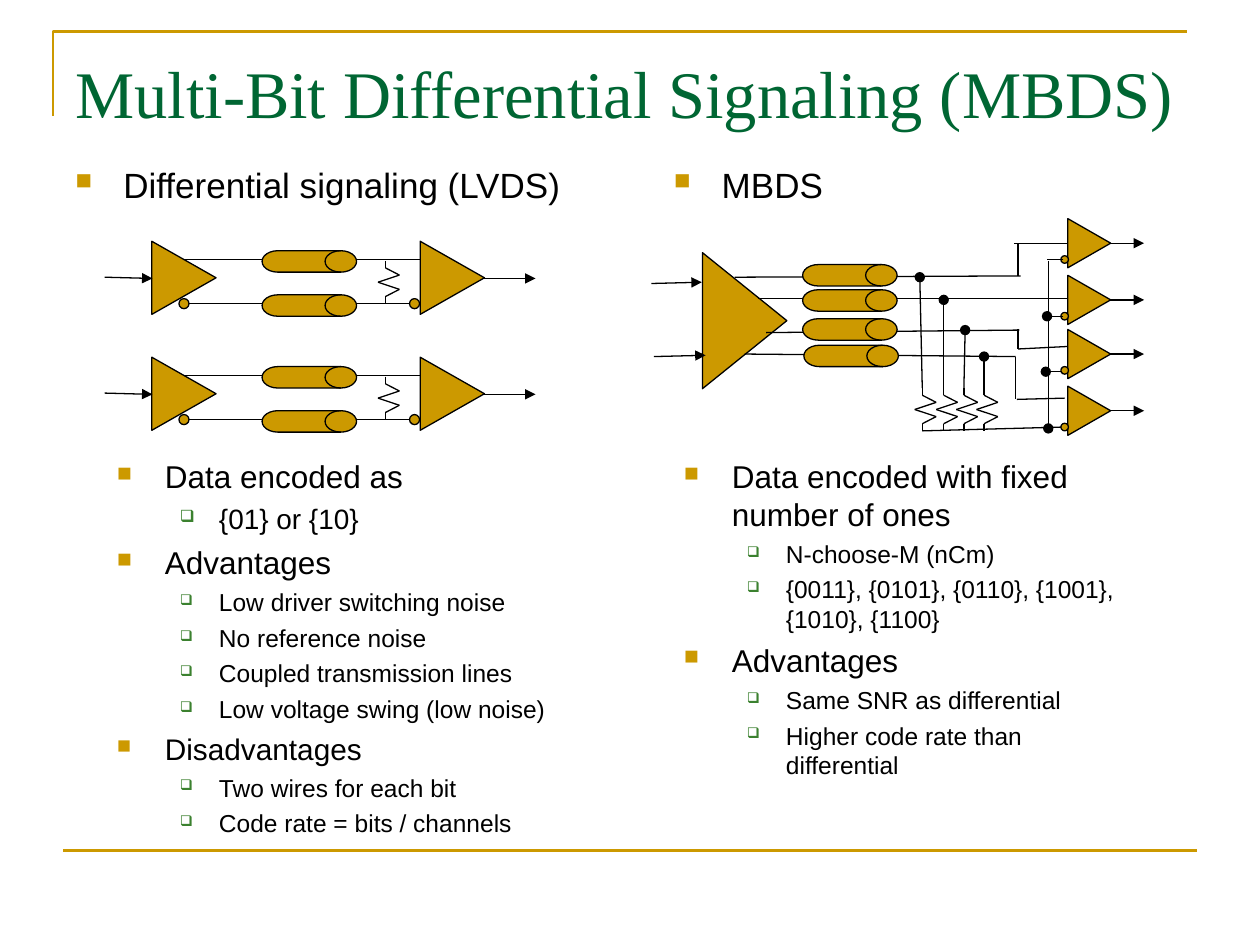
from typing import NamedTuple

from lxml import etree
from pptx import Presentation
from pptx import util as u
from pptx.dml.color import RGBColor
from pptx.enum import shapes, text
from pptx.oxml import ns
from pptx.shapes.shapetree import GroupShapes
from pptx.slide import Slide

COLORS = {"gold": "CC9900", "title": "006633", "ink": "000000", "sub": "3B812F"}
LINE_WIDTH = u.Pt(0.75)
SHAPE = shapes.MSO_SHAPE


class Item(NamedTuple):
    text: str
    size: int
    level: int = 0


class Bullet(NamedTuple):
    char: str
    color: str
    percent: int
    left: float
    hang: float


class Wire(NamedTuple):
    x1: float
    y1: float
    x2: float
    y2: float
    head: str = ""
    tail: str = ""


BULLETS = (Bullet("■", "gold", 65, 0.38, 0.38), Bullet("❑", "sub", 60, 0.81, 0.31))


def rgb(name: str) -> RGBColor:
    return RGBColor.from_string(COLORS[name])


def add_wire(canvas: GroupShapes, wire: Wire, color: str = "ink", width: int = LINE_WIDTH) -> None:
    ends = (u.Inches(v) for v in wire[:4])
    connector = canvas.add_connector(shapes.MSO_CONNECTOR.STRAIGHT, *ends)
    connector.line.color.rgb = rgb(color)
    connector.line.width = width
    line_xml = connector.line._get_or_add_ln()
    for tag, kind in (("a:headEnd", wire.head), ("a:tailEnd", wire.tail)):
        if kind:
            etree.SubElement(line_xml, ns.qn(tag), type=kind)
    etree.SubElement(connector._element.spPr, ns.qn("a:effectLst"))


def add_part(canvas: GroupShapes, kind: SHAPE, left: float, top: float,
             width: float, height: float, rotation: float = 0) -> None:
    part = canvas.add_shape(kind, *(u.Inches(v) for v in (left, top, width, height)))
    part.rotation = rotation
    part.shadow.inherit = False
    part.fill.solid()
    part.fill.fore_color.rgb = rgb("gold")
    part.line.color.rgb = rgb("ink")
    part.line.width = LINE_WIDTH


def add_resistor(canvas: GroupShapes, x: float, top: float) -> None:
    offsets = (0, 0, 0.11, -0.06, 0.11, 0, 0)
    step = 0.34 / 6
    points = [(x + dx, top + i * step) for i, dx in enumerate(offsets)]
    for start, end in zip(points, points[1:]):
        add_wire(canvas, Wire(*start, *end))


def add_text_frame(slide: Slide, left: float, top: float, width: float, height: float):
    box = slide.shapes.add_textbox(*(u.Inches(v) for v in (left, top, width, height)))
    box.text_frame.word_wrap = True
    return box.text_frame


def add_outline(slide: Slide, left: float, top: float, width: float,
                height: float, items: list[Item]) -> None:
    frame = add_text_frame(slide, left, top, width, height)
    for i, item in enumerate(items):
        paragraph = frame.paragraphs[0] if i == 0 else frame.add_paragraph()
        paragraph.text = item.text
        paragraph.level = item.level
        paragraph.space_before = u.Pt(item.size * 0.25)
        bullet = BULLETS[item.level]
        props = paragraph._p.get_or_add_pPr()
        props.set("marL", str(u.Inches(bullet.left)))
        props.set("indent", str(-u.Inches(bullet.hang)))
        color = etree.SubElement(props, ns.qn("a:buClr"))
        etree.SubElement(color, ns.qn("a:srgbClr"), val=COLORS[bullet.color])
        etree.SubElement(props, ns.qn("a:buSzPct"), val=str(bullet.percent * 1000))
        etree.SubElement(props, ns.qn("a:buChar"), char=bullet.char)
        paragraph.font.name = "Arial"
        paragraph.font.size = u.Pt(item.size)
        paragraph.font.color.rgb = rgb("ink")


def add_lvds_link(slide: Slide, y: float) -> None:
    """Draw one differential pair whose driver starts at height y."""
    canvas = slide.shapes.add_group_shape().shapes
    add_part(canvas, SHAPE.ISOSCELES_TRIANGLE, 1.17, y, 0.58, 0.51, 90)
    add_part(canvas, SHAPE.OVAL, 1.42, y + 0.42, 0.08, 0.08)
    add_wire(canvas, Wire(1.21, y + 0.26, 0.83, y + 0.25, head="triangle"))
    add_wire(canvas, Wire(1.46, y + 0.11, 3.33, y + 0.11))
    add_wire(canvas, Wire(1.5, y + 0.46, 3.33, y + 0.46))
    add_part(canvas, SHAPE.ISOSCELES_TRIANGLE, 3.3, y, 0.58, 0.51, 90)
    add_part(canvas, SHAPE.OVAL, 3.25, y + 0.42, 0.08, 0.08)
    for drop in (0.04, 0.39):
        add_part(canvas, SHAPE.FLOWCHART_DIRECT_ACCESS_STORAGE, 2.08, y + drop, 0.75, 0.17)
    add_wire(canvas, Wire(3.84, y + 0.26, 4.25, y + 0.26, tail="triangle"))
    add_resistor(canvas, 3.06, y + 0.12)


def add_mbds_link(slide: Slide) -> None:
    canvas = slide.shapes.add_group_shape().shapes
    # Driver and receivers
    add_part(canvas, SHAPE.ISOSCELES_TRIANGLE, 5.37, 2.21, 1.08, 0.67, 90)
    for y in (1.93, 2.38, 2.81, 3.26):
        add_part(canvas, SHAPE.ISOSCELES_TRIANGLE, 8.45, y - 0.17, 0.39, 0.34, 90)
        add_part(canvas, SHAPE.OVAL, 8.42, y + 0.1, 0.06, 0.06)
        add_wire(canvas, Wire(8.81, y, 9.08, y, tail="triangle"))
    # Signal wires and transmission lines
    for wire in (Wire(5.83, 2.2, 8.1, 2.19), Wire(6.02, 2.37, 8.47, 2.37),
                 Wire(5.91, 2.81, 8.06, 2.83), Wire(6.08, 2.64, 8.09, 2.62)):
        add_wire(canvas, wire)
    for left, top in ((6.37, 2.1), (6.37, 2.3), (6.37, 2.53), (6.38, 2.74)):
        add_part(canvas, SHAPE.FLOWCHART_DIRECT_ACCESS_STORAGE, left, top, 0.75, 0.17)
    # Termination: a tap and a resistor for each signal
    for x, tap_x, tap_y in ((7.32, 7.3, 2.2), (7.49, 7.49, 2.38),
                            (7.65, 7.66, 2.62), (7.81, 7.81, 2.83)):
        add_resistor(canvas, x, 3.08)
        add_wire(canvas, Wire(x, 3.08, tap_x, tap_y, tail="oval"))
    # Common reference, receiver routing and inputs
    for wire in (
        Wire(8.42, 3.39, 7.32, 3.42),
        Wire(8.32, 3.4, 8.32, 2.07, head="oval"),
        Wire(8.44, 2.06, 8.31, 2.06),
        Wire(8.44, 2.51, 8.31, 2.51, tail="oval"),
        Wire(8.43, 2.95, 8.3, 2.95, tail="oval"),
        Wire(8.47, 1.93, 8.05, 1.93),
        Wire(8.08, 1.93, 8.08, 2.19),
        Wire(8.47, 2.75, 8.08, 2.77),
        Wire(8.08, 2.61, 8.08, 2.77),
        Wire(8.06, 2.83, 8.06, 3.17),
        Wire(8.07, 3.17, 8.45, 3.16),
        Wire(5.17, 2.25, 5.57, 2.24, tail="triangle"),
        Wire(5.19, 2.83, 5.6, 2.82, tail="triangle"),
    ):
        add_wire(canvas, wire)


def main() -> None:
    deck = Presentation()
    deck.slide_width, deck.slide_height = u.Inches(10), u.Inches(7.5)
    slide = deck.slides.add_slide(deck.slide_layouts[6])

    # Corner rule and footer rule
    builder = slide.shapes.build_freeform(u.Inches(0.42), u.Inches(0.92))
    builder.add_line_segments([(u.Inches(x), u.Inches(0.25)) for x in (0.42, 9.42)], close=False)
    corner = builder.convert_to_shape()
    corner.shadow.inherit = False
    corner.fill.background()
    corner.line.color.rgb = rgb("gold")
    corner.line.width = u.Pt(1.5)
    add_wire(slide.shapes, Wire(0.5, 6.75, 9.5, 6.75), "gold", u.Pt(1.5))

    # Title
    title = add_text_frame(slide, 0.5, 0.3, 9, 0.7)
    title.vertical_anchor = text.MSO_ANCHOR.TOP
    title.margin_top = u.Inches(0.11)
    heading = title.paragraphs[0]
    heading.text = "Multi-Bit Differential Signaling (MBDS)"
    heading.font.name = "Times New Roman"
    heading.font.size = u.Pt(38)
    heading.font.color.rgb = rgb("title")

    # Left column: LVDS
    add_outline(slide, 0.5, 1.25, 4.08, 0.5, [Item("Differential signaling (LVDS)", 20)])
    for y in (1.95, 2.87):
        add_lvds_link(slide, y)
    add_outline(slide, 0.83, 3.58, 3.83, 3.33, [
        Item("Data encoded as", 18),
        Item("{01} or {10}", 16, 1),
        Item("Advantages", 18),
        Item("Low driver switching noise", 14, 1),
        Item("No reference noise", 14, 1),
        Item("Coupled transmission lines", 14, 1),
        Item("Low voltage swing (low noise)", 14, 1),
        Item("Disadvantages", 17),
        Item("Two wires for each bit", 14, 1),
        Item("Code rate = bits / channels", 14, 1),
    ])

    # Right column: MBDS
    add_outline(slide, 5.25, 1.25, 3.83, 0.67, [Item("MBDS", 20)])
    add_mbds_link(slide)
    add_outline(slide, 5.33, 3.58, 3.83, 2.67, [
        Item("Data encoded with fixed number of ones", 18),
        Item("N-choose-M (nCm)", 14, 1),
        Item("{0011}, {0101}, {0110}, {1001}, {1010}, {1100}", 14, 1),
        Item("Advantages", 18),
        Item("Same SNR as differential", 14, 1),
        Item("Higher code rate than differential", 14, 1),
    ])

    deck.save("out.pptx")


if __name__ == "__main__":
    main()
